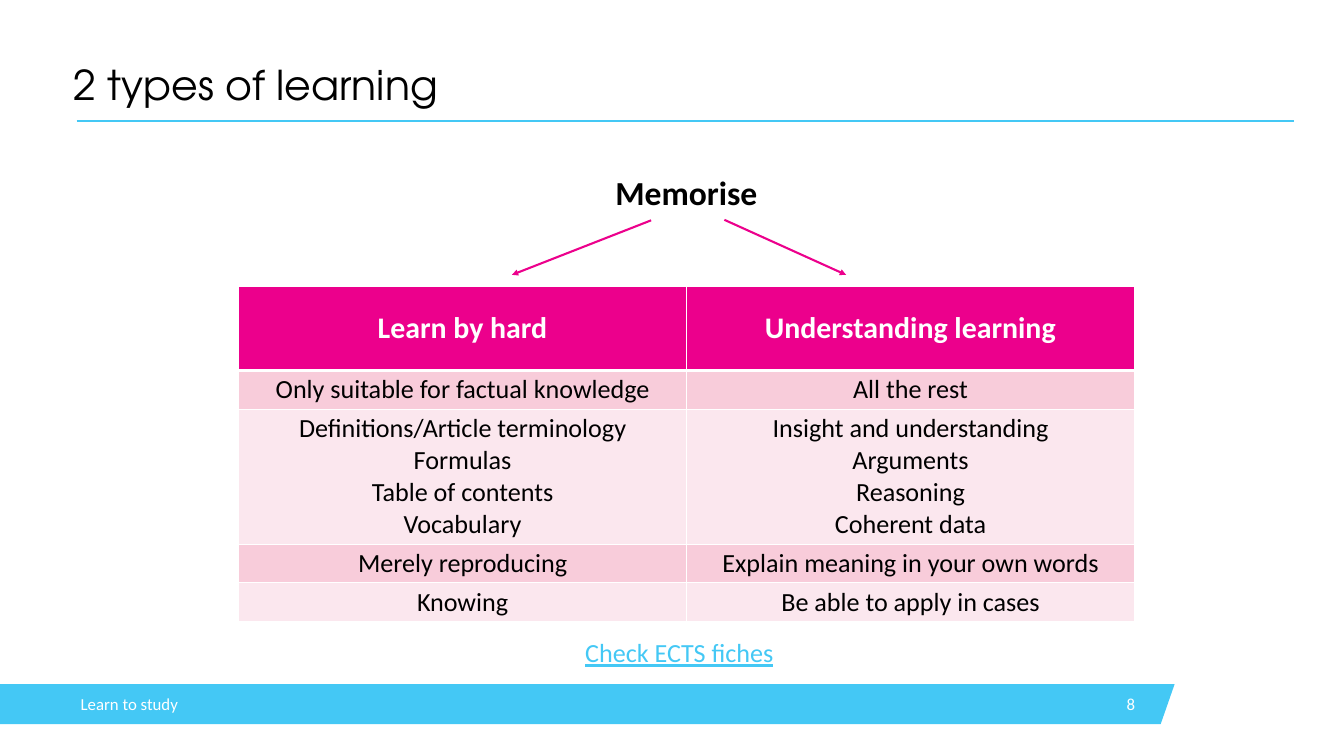
from dataclasses import dataclass

import pptx
import pptx.dml.color
import pptx.enum.shapes
import pptx.enum.text
import pptx.oxml
import pptx.oxml.ns
import pptx.oxml.xmlchemy
import pptx.util

Cm = pptx.util.Cm
Pt = pptx.util.Pt
Align = pptx.enum.text.PP_ALIGN
Anchor = pptx.enum.text.MSO_ANCHOR


@dataclass(frozen=True)
class Theme:
    blue: str = "44C8F5"
    pink: str = "EC008C"
    dark_band: str = "F8CCDA"
    light_band: str = "FBE7EE"
    black: str = "000000"
    white: str = "FFFFFF"
    title_font: str = "TeX Gyre Adventor"
    body_font: str = "Calibri"
    title_size: int = 44
    heading_size: int = 36
    header_size: int = 32
    body_size: int = 28
    footer_size: int = 18
    line_width: float = 2.25


THEME = Theme()


@dataclass(frozen=True)
class Style:
    size: int
    color: str
    font: str = THEME.body_font
    bold: bool = False
    underline: bool = False
    align: Align = Align.LEFT
    line_spacing: float = 1.0


@dataclass(frozen=True)
class Label:
    text: str
    left: float
    top: float
    width: float
    height: float
    style: Style
    anchor: Anchor = Anchor.TOP
    inset: bool = True


@dataclass(frozen=True)
class Line:
    start: tuple[float, float]
    end: tuple[float, float]
    color: str
    arrow: bool = False


@dataclass(frozen=True)
class Row:
    height: float
    texts: tuple[str, str]
    fill: str


TITLE = Label("2 types of learning", 2.77, 2.46, 46.05, 1.75,
              Style(THEME.title_size, THEME.black, THEME.title_font, line_spacing=0.9), inset=False)
LABELS = (
    Label("Memorise", 2.92, 6.53, 46.05, 16.97,
          Style(THEME.heading_size, THEME.black, bold=True, align=Align.CENTER, line_spacing=0.9)),
    Label("8", 40.39, 25.86, 2.77, 1.52,
          Style(THEME.footer_size, THEME.white, align=Align.RIGHT), Anchor.MIDDLE),
    Label("Learn to study", 3.05, 25.83, 17.15, 1.52,
          Style(THEME.footer_size, THEME.white), Anchor.MIDDLE, inset=False),
    Label("Check ECTS fiches", 21.87, 23.95, 7.8, 1.45,
          Style(THEME.body_size, THEME.blue, underline=True)),
)
TITLE_RULE = Line((2.9, 4.57), (48.9, 4.57), THEME.blue)
ARROWS = (
    Line((24.61, 8.33), (19.35, 10.39), THEME.pink, arrow=True),
    Line((27.38, 8.31), (31.98, 10.39), THEME.pink, arrow=True),
)
ROWS = (
    Row(3.18, ("Learn by hard", "Understanding learning"), THEME.pink),
    Row(1.45, ("Only suitable for factual knowledge", "All the rest"), THEME.dark_band),
    Row(5.11, ("Definitions/Article terminology\nFormulas\nTable of contents\nVocabulary",
               "Insight and understanding\nArguments\nReasoning\nCoherent data"), THEME.light_band),
    Row(1.45, ("Merely reproducing", "Explain meaning in your own words"), THEME.dark_band),
    Row(1.45, ("Knowing", "Be able to apply in cases"), THEME.light_band),
)
TABLE_LEFT, TABLE_TOP, COLUMN_WIDTH = 9.02, 10.82, 16.93
HEADER_STYLE = Style(THEME.header_size, THEME.white, bold=True, align=Align.CENTER)
CELL_STYLE = Style(THEME.body_size, THEME.black, align=Align.CENTER)


def rgb(color: str) -> pptx.dml.color.RGBColor:
    return pptx.dml.color.RGBColor.from_string(color)


def write_text(text_frame, text: str, style: Style) -> None:
    text_frame.text = text
    for paragraph in text_frame.paragraphs:
        paragraph.alignment = style.align
        paragraph.line_spacing = style.line_spacing
        for run in paragraph.runs:
            run.font.name = style.font
            run.font.size = Pt(style.size)
            run.font.bold = style.bold
            run.font.underline = style.underline
            run.font.color.rgb = rgb(style.color)


def fill_label(shape, label: Label) -> None:
    """Place a text box or placeholder and write the label into it."""
    shape.left, shape.top = Cm(label.left), Cm(label.top)
    shape.width, shape.height = Cm(label.width), Cm(label.height)
    text_frame = shape.text_frame
    text_frame.word_wrap = True
    text_frame.auto_size = pptx.enum.text.MSO_AUTO_SIZE.NONE
    text_frame.vertical_anchor = label.anchor
    if not label.inset:
        text_frame.margin_left = text_frame.margin_right = 0
        text_frame.margin_top = text_frame.margin_bottom = 0
    write_text(text_frame, label.text, label.style)


def draw_label(slide, label: Label) -> None:
    fill_label(slide.shapes.add_textbox(0, 0, 0, 0), label)


def draw_line(slide, line: Line) -> None:
    connector = slide.shapes.add_connector(
        pptx.enum.shapes.MSO_CONNECTOR.STRAIGHT, *map(Cm, line.start + line.end))
    connector.line.color.rgb = rgb(line.color)
    connector.line.width = Pt(THEME.line_width)
    properties = connector._element.spPr
    if line.arrow:
        tail = pptx.oxml.xmlchemy.OxmlElement("a:tailEnd")
        tail.set("type", "triangle")
        properties.find(pptx.oxml.ns.qn("a:ln")).append(tail)
    properties.append(pptx.oxml.xmlchemy.OxmlElement("a:effectLst"))


def draw_banner(slide) -> None:
    builder = slide.shapes.build_freeform(0, Cm(25.86))
    corners = ((44.4, 25.86), (43.87, 27.38), (0, 27.38))
    builder.add_line_segments([(Cm(x), Cm(y)) for x, y in corners])
    banner = builder.convert_to_shape()
    banner.shadow.inherit = False
    banner.fill.solid()
    banner.fill.fore_color.rgb = rgb(THEME.blue)
    banner.line.fill.background()


def set_borders(cell, top: float, bottom: float) -> None:
    """Draw white borders; the side borders are always 1 pt."""
    properties = cell._tc.get_or_add_tcPr()
    for index, (side, width) in enumerate((("L", 1), ("R", 1), ("T", top), ("B", bottom))):
        properties.insert(index, pptx.oxml.parse_xml(
            f'<a:ln{side} {pptx.oxml.ns.nsdecls("a")} w="{int(Pt(width))}"><a:solidFill>'
            f'<a:srgbClr val="{THEME.white}"/></a:solidFill></a:ln{side}>'))


def draw_table(slide, rows: tuple[Row, ...]) -> None:
    table = slide.shapes.add_table(
        len(rows), 2, Cm(TABLE_LEFT), Cm(TABLE_TOP),
        Cm(2 * COLUMN_WIDTH), Cm(sum(row.height for row in rows))).table
    table.horz_banding = False
    for column in table.columns:
        column.width = Cm(COLUMN_WIDTH)
    for row_index, row in enumerate(rows):
        table.rows[row_index].height = Cm(row.height)
        for column_index, text in enumerate(row.texts):
            cell = table.cell(row_index, column_index)
            cell.fill.solid()
            cell.fill.fore_color.rgb = rgb(row.fill)
            is_header = row_index == 0
            cell.vertical_anchor = Anchor.MIDDLE if is_header else Anchor.TOP
            write_text(cell.text_frame, text, HEADER_STYLE if is_header else CELL_STYLE)
            set_borders(cell, top=3 if row_index == 1 else 1, bottom=3 if is_header else 1)


def main() -> None:
    presentation = pptx.Presentation()
    presentation.slide_width, presentation.slide_height = Cm(50.8), Cm(28.58)
    slide = presentation.slides.add_slide(presentation.slide_layouts.get_by_name("Title Only"))
    fill_label(slide.shapes.title, TITLE)
    draw_banner(slide)
    draw_line(slide, TITLE_RULE)
    for label in LABELS:
        draw_label(slide, label)
    draw_table(slide, ROWS)
    for arrow in ARROWS:
        draw_line(slide, arrow)
    presentation.save("out.pptx")


if __name__ == "__main__":
    main()
